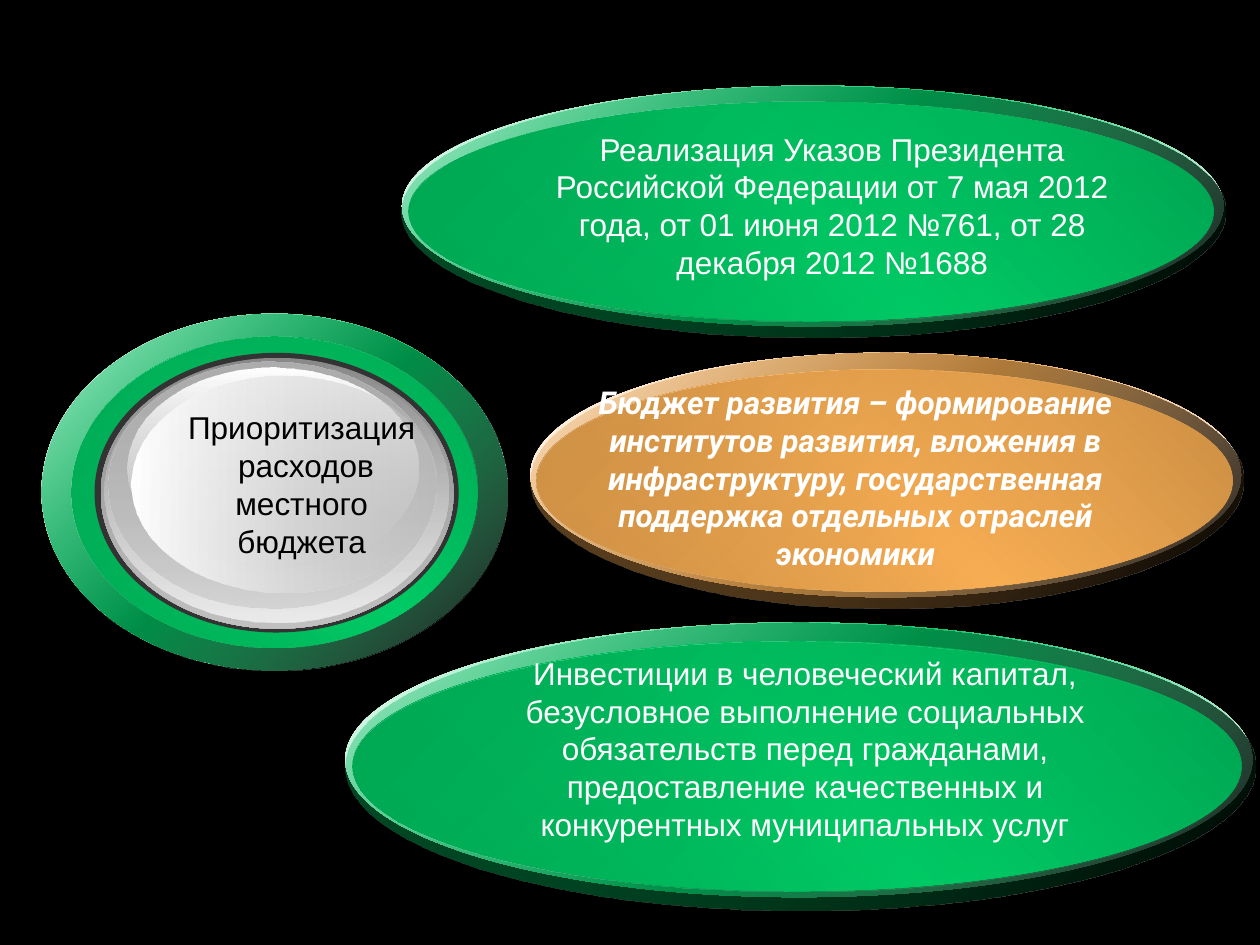
import pptx
import pptx.dml.color
import pptx.enum.shapes
import pptx.enum.text
import pptx.oxml
import pptx.oxml.ns
import pptx.util
from pptx.util import Inches

GREEN = ("00CC66", "009C4E", "00A754")  # bright, dark, middle
ORANGE = ("FAAF54", "BF8640", "CD9045")

# Shadow size, then inner left, top, width and height, as parts of the rim box
OVAL_RATIOS = ((1.003, 1.047), (0.008, 0.068, 0.98, 0.91))
BUTTON_RATIOS = ((1, 1), (0.065, 0.064, 0.87, 0.873))


def color(hex_string):
    return pptx.dml.color.RGBColor.from_string(hex_string)


def set_gradient(shape, stops, angle):
    """Fill with stops of (position, colour, opacity), all but colour in percent."""
    stop_xml = "".join(
        f'<a:gs pos="{position * 1000}"><a:srgbClr val="{hex_string}">'
        f'<a:alpha val="{opacity * 1000}"/></a:srgbClr></a:gs>'
        for position, hex_string, opacity in stops
    )
    gradient = pptx.oxml.parse_xml(
        f'<a:gradFill {pptx.oxml.ns.nsdecls("a")} rotWithShape="1">'
        f"<a:gsLst>{stop_xml}</a:gsLst>"
        f'<a:lin ang="{angle * 60000}" scaled="1"/></a:gradFill>'
    )
    geometry = shape.element.spPr.find(pptx.oxml.ns.qn("a:prstGeom"))
    geometry.addnext(gradient)


def add_ellipse(slide, box, stops=None, angle=0, solid=None):
    shape = slide.shapes.add_shape(
        pptx.enum.shapes.MSO_SHAPE.OVAL, *[Inches(length) for length in box]
    )
    shape.shadow.inherit = False
    shape.line.fill.background()
    if solid:
        shape.fill.solid()
        shape.fill.fore_color.rgb = color(solid)
    else:
        set_gradient(shape, stops, angle)
    return shape


def write_text(shape, lines, font="Arial", size=18, fill="FFFFFF",
               bold=False, italic=False, wrap=True):
    frame = shape.text_frame
    frame.word_wrap = wrap
    for index, line in enumerate(lines):
        paragraph = frame.add_paragraph() if index else frame.paragraphs[0]
        paragraph.alignment = pptx.enum.text.PP_ALIGN.CENTER
        run = paragraph.add_run()
        run.text = line
        run.font.name = font
        run.font.size = pptx.util.Pt(size)
        run.font.bold = bold
        run.font.italic = italic
        run.font.color.rgb = color(fill)


def add_glossy_ellipse(slide, box, palette, ratios):
    """Stack a light rim, its shadow and two inner layers."""
    left, top, width, height = box
    bright, dark, middle = palette
    (shadow_width, shadow_height), (inset_x, inset_y, inner_width, inner_height) = ratios
    shadow = (left, top, width * shadow_width, height * shadow_height)
    inner = (left + width * inset_x, top + height * inset_y,
             width * inner_width, height * inner_height)
    layers = (
        (box, [(0, "FFFFFF", 100), (50, bright, 100), (100, "FFFFFF", 100)], 45),
        (shadow, [(0, bright, 32), (100, "000000", 90)], 45),
        (inner, [(0, dark, 100), (50, bright, 100), (100, dark, 100)], 315),
        (inner, [(0, middle, 100), (100, bright, 0)], 45),
    )
    for layer_box, stops, angle in layers:
        add_ellipse(slide, layer_box, stops, angle)


def add_button(slide, box, lines):
    left, top, width, height = box
    add_glossy_ellipse(slide, box, GREEN, BUTTON_RATIOS)
    add_ellipse(slide, (left + 0.42, top + 0.31, width - 0.81, height - 0.61),
                solid="333333")
    # Each layer: offset and size, start colour and opacity, end colour and opacity
    silver_layers = (
        ((0.47, 0.35, 2.8, 2.15), ("898989", 100), ("C0C0C0", 100)),
        ((0.5, 0.36, 2.73, 2.09), ("C0C0C0", 0), ("EBEBEB", 100)),
        ((0.53, 0.38, 2.6, 1.96), ("AEAEAE", 100), ("C0C0C0", 48)),
        ((0.68, 0.43, 2.31, 1.59), ("FFFFFF", 100), ("C0C0C0", 38)),
        ((1.06, 0.14, 1.72, 2.42), ("FFFFFF", 100), ("C0C0C0", 38)),
    )
    for (x, y, layer_width, layer_height), start, end in silver_layers:
        face = add_ellipse(slide, (left + x, top + y, layer_width, layer_height),
                           [(0, *start), (100, *end)], 90)
    # The front face is turned; vertical text in it reads level again
    face.rotation = 270
    write_text(face, lines, fill="000000", wrap=False)
    face.text_frame.vertical_anchor = pptx.enum.text.MSO_ANCHOR.MIDDLE
    face.text_frame._txBody.bodyPr.set("vert", "eaVert")


def add_caption(slide, box, lines, **text_format):
    caption = slide.shapes.add_textbox(*[Inches(length) for length in box])
    write_text(caption, lines, **text_format)


def main():
    presentation = pptx.Presentation()
    presentation.slide_width = Inches(10)
    presentation.slide_height = Inches(7.5)
    slide = presentation.slides.add_slide(presentation.slide_layouts[6])
    slide.background.fill.solid()
    slide.background.fill.fore_color.rgb = color("000000")

    add_button(slide, (0.33, 2.49, 3.7, 2.83),
               ["Приоритизация", " расходов", " местного ", "бюджета"])

    ovals = (
        ((3.19, 0.68, 6.52, 1.91), GREEN),
        ((4.21, 2.8, 5.64, 1.94), ORANGE),
        ((2.74, 4.94, 7.2, 2.18), GREEN),
    )
    for box, palette in ovals:
        add_glossy_ellipse(slide, box, palette, OVAL_RATIOS)

    add_caption(slide, (4.03, 0.98, 5.15, 1.31), [
        "Реализация Указов Президента",
        "Российской Федерации от 7 мая 2012",
        "года, от 01 июня 2012 №761, от 28",
        "декабря 2012 №1688",
    ])
    add_caption(slide, (3.49, 5.14, 5.8, 1.62), [
        "Инвестиции в человеческий капитал,",
        "безусловное выполнение социальных",
        "обязательств перед гражданами,",
        "предоставление качественных и",
        "конкурентных муниципальных услуг",
    ])
    add_caption(slide, (4.29, 2.99, 5, 1.62), [
        "Бюджет развития – формирование",
        "институтов развития, вложения в",
        "инфраструктуру, государственная",
        "поддержка отдельных отраслей",
        "экономики",
    ], font="Roboto", bold=True, italic=True)

    presentation.save("out.pptx")


if __name__ == "__main__":
    main()
